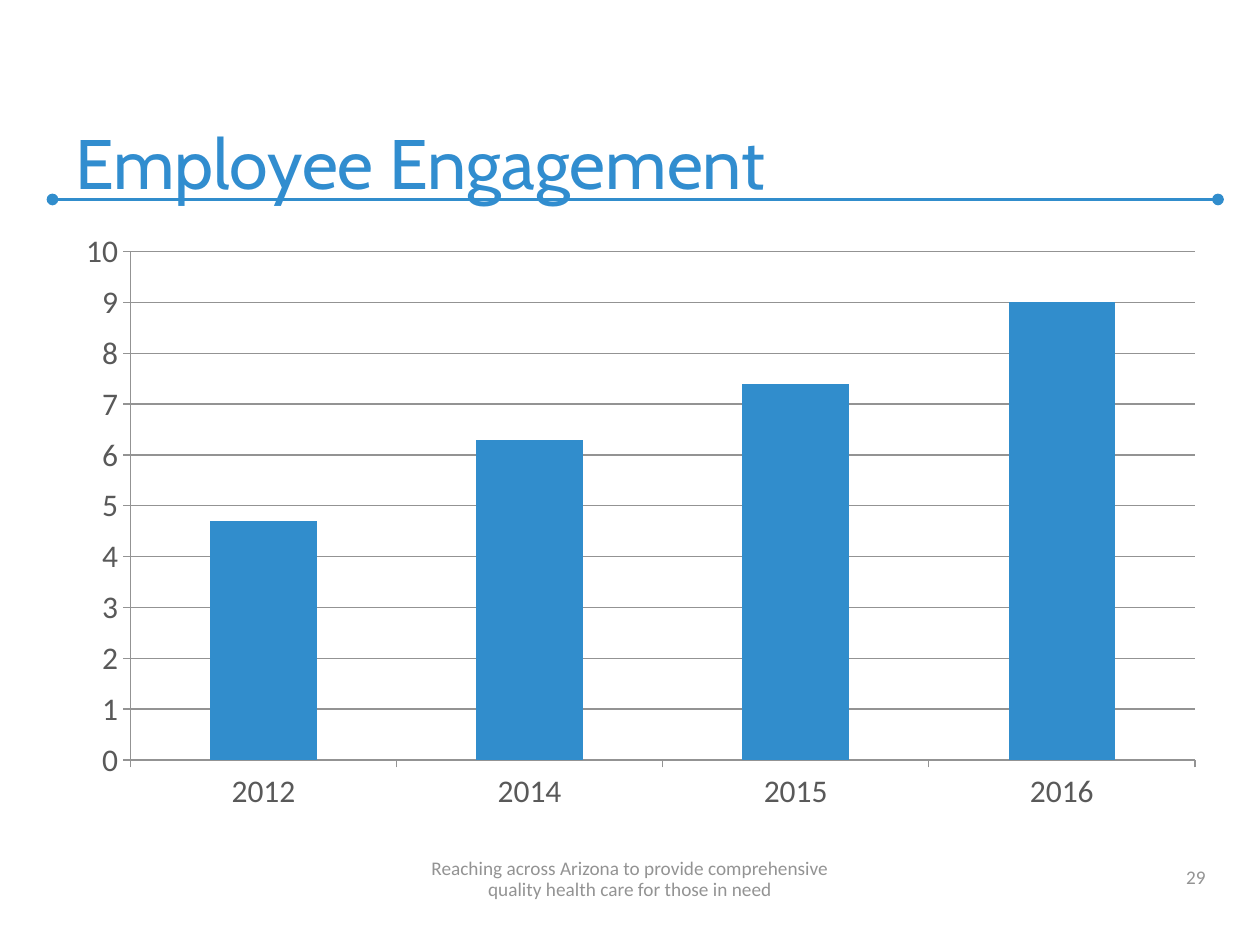
from pptx import Presentation
from pptx import util as u
from pptx.chart import data as cd
from pptx.dml import color as col
from pptx.enum import chart as ce, shapes, text
from pptx.oxml.ns import qn
from lxml import etree

Pt = u.Pt
BLUE, GRID, GREY, DARK = "318DCC", "939393", "939393", "595959"


def rgb(code):
    return col.RGBColor.from_string(code)


def style(font, size, face, code):
    font.size, font.name = Pt(size), face
    font.color.rgb = rgb(code)


def add_text(slide, box, words, size, face, code, align, space=None):
    frame = slide.shapes.add_textbox(*map(Pt, box)).text_frame
    frame.word_wrap = True
    frame.vertical_anchor = text.MSO_ANCHOR.BOTTOM
    para = frame.paragraphs[0]
    para.text = words
    para.alignment = align
    if space:
        para.line_spacing = Pt(space)
    style(para.font, size, face, code)


def add_rule(slide, left, right, y):
    """Draw a level line with a dot at each end."""
    rule = slide.shapes.add_connector(
        shapes.MSO_CONNECTOR.STRAIGHT, Pt(left), Pt(y), Pt(right), Pt(y))
    rule.line.color.rgb = rgb(BLUE)
    rule.line.width = Pt(2.25)
    line = rule.line._get_or_add_ln()
    for end in ("a:headEnd", "a:tailEnd"):
        etree.SubElement(line, qn(end), type="oval")
    etree.SubElement(rule._element.spPr, qn("a:effectLst"))


def add_header(slide, box):
    left, top, width, height = box
    add_rule(slide, left - 6, left + width + 6, top + height - 6)
    add_text(slide, box, "Employee Engagement", 40, "Cabin", "318DCF",
             text.PP_ALIGN.LEFT)


def add_bars(slide, box):
    data = cd.CategoryChartData()
    data.categories = ["2012", "2014", "2015", "2016"]
    data.add_series("Series 1", (4.7, 6.3, 7.4, 9))
    chart = slide.shapes.add_chart(
        ce.XL_CHART_TYPE.COLUMN_CLUSTERED, *map(Pt, box), data).chart
    chart.has_legend = chart.has_title = False
    style(chart.font, 18, "Calibri", DARK)

    plot = chart.plots[0]
    plot.gap_width = 150
    plot.vary_by_categories = False
    fill = plot.series[0].format.fill
    fill.solid()
    fill.fore_color.rgb = rgb(BLUE)

    scale = chart.value_axis
    scale.minimum_scale, scale.maximum_scale, scale.major_unit = 0, 10, 1
    scale.has_major_gridlines = True
    chart.category_axis.has_major_gridlines = False
    for axis in (scale, chart.category_axis):
        axis.major_tick_mark = ce.XL_TICK_MARK.OUTSIDE
        axis.minor_tick_mark = ce.XL_TICK_MARK.NONE
    for part in (scale, chart.category_axis, scale.major_gridlines):
        part.format.line.color.rgb = rgb(GRID)
        part.format.line.width = Pt(0.75)


def add_footer(slide, box):
    left, top, width, height = box
    add_text(slide, (left + width - 192, top, 168, 23), "29",
             11, "Calibri", GREY, text.PP_ALIGN.RIGHT)
    add_text(slide, box,
             "Reaching across Arizona to provide comprehensive\v"
             "quality health care for those in need",
             11, "Calibri", GREY, text.PP_ALIGN.CENTER, 12)


def main():
    deck = Presentation()
    deck.slide_width, deck.slide_height = Pt(720), Pt(540)
    slide = deck.slides.add_slide(deck.slide_layouts[6])
    add_header(slide, (36, 24, 654, 96))
    add_bars(slide, (36, 126, 660, 344))
    add_footer(slide, (0, 488, 720, 30))
    deck.save("out.pptx")


if __name__ == "__main__":
    main()
